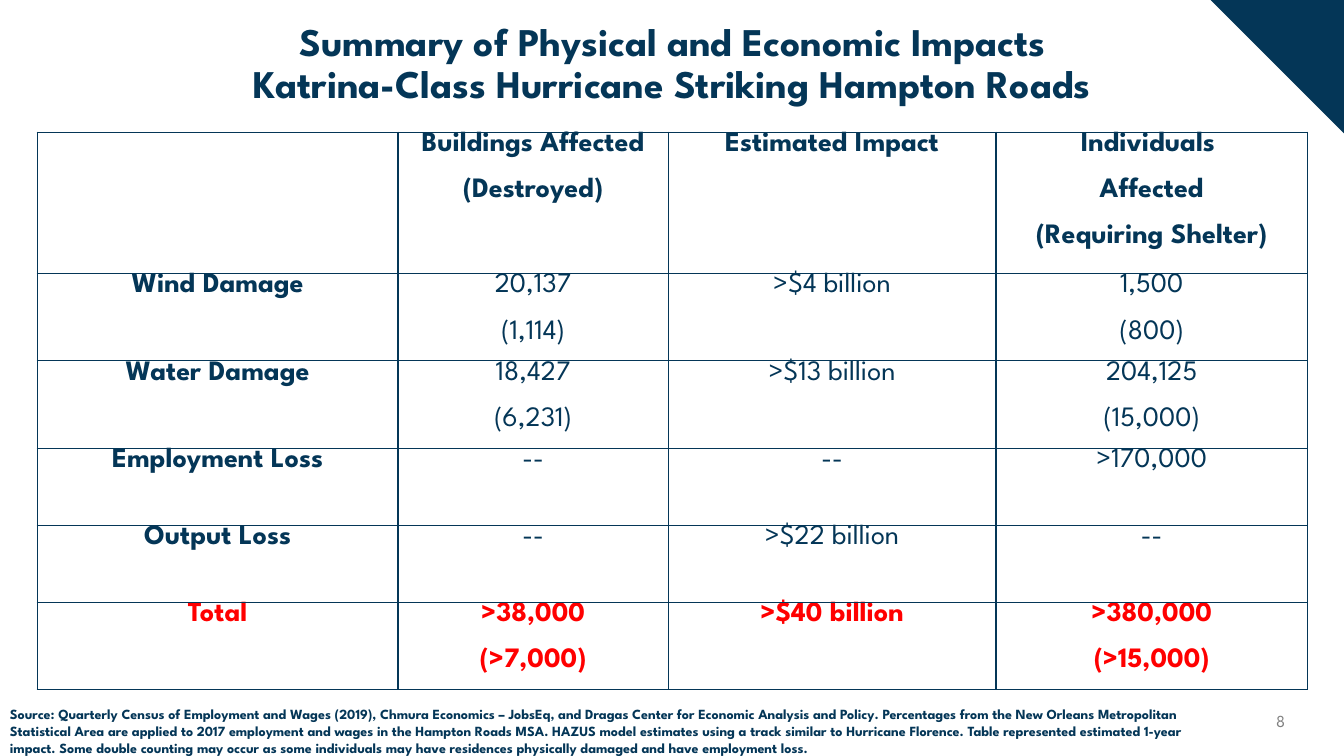
from dataclasses import dataclass
from lxml.etree import SubElement
from pptx import Presentation
from pptx.dml.color import RGBColor
from pptx.enum.shapes import MSO_SHAPE
from pptx.enum.text import MSO_ANCHOR, MSO_AUTO_SIZE, PP_ALIGN
from pptx.oxml.ns import qn
from pptx.slide import Slide
from pptx.table import _Cell
from pptx.text.text import TextFrame
from pptx.util import Cm, Pt


@dataclass(frozen=True)
class Theme:
    font: str = "League Spartan"
    navy: str = "043657"
    red: str = "FF0000"
    gray: str = "808080"
    title: int = 28
    cell: int = 20
    page: int = 12
    note: int = 10


@dataclass(frozen=True)
class Box:
    left: float
    top: float
    width: float
    height: float

    def place(self) -> tuple[Cm, Cm, Cm, Cm]:
        return Cm(self.left), Cm(self.top), Cm(self.width), Cm(self.height)


@dataclass(frozen=True)
class Row:
    height: float
    texts: tuple[str, str, str, str]
    color: str = Theme.navy
    bold: bool = False


THEME = Theme()
COLS = (9.09, 6.81, 8.26, 7.85)
ROWS = (
    Row(3.48, ("", "Buildings Affected\n(Destroyed)", "Estimated Impact",
               "Individuals \nAffected\n(Requiring Shelter)"), bold=True),
    Row(2.16, ("Wind Damage", "20,137\n(1,114)", ">$4 billion", "1,500\n(800)")),
    Row(2.16, ("Water Damage", "18,427\n(6,231)", ">$13 billion", "204,125\n(15,000)")),
    Row(1.94, ("Employment Loss", "--", "--", ">170,000")),
    Row(1.94, ("Output Loss", "--", ">$22 billion", "--")),
    Row(2.16, ("Total", ">38,000\n(>7,000)", ">$40 billion", ">380,000\n(>15,000)"),
        color=THEME.red, bold=True),
)
NOTE = (
    "Source: Quarterly Census of Employment and Wages (2019), Chmura Economics – JobsEq, "
    "and Dragas Center for Economic Analysis and Policy. Percentages from the New Orleans "
    "Metropolitan Statistical Area are applied to 2017 employment and wages in the Hampton "
    "Roads MSA. HAZUS model estimates using a track similar to Hurricane Florence. Table "
    "represented estimated 1-year impact. Some double counting may occur as some individuals "
    "may have residences physically damaged and have employment loss."
)


def write(frame: TextFrame, text: str, *, size: int, color: str = THEME.navy,
          bold: bool = False, align: PP_ALIGN = PP_ALIGN.LEFT,
          after: float = 0, lead: float = 1.0) -> None:
    """Fill a frame: each line is a paragraph, a vertical tab breaks a line."""
    frame.word_wrap = True
    for i, line in enumerate(text.split("\n")):
        para = frame.add_paragraph() if i else frame.paragraphs[0]
        para.text = line
        para.alignment = align
        para.line_spacing = lead
        para.space_before = Pt(0)
        para.space_after = Pt(after)
        for run in para.runs:
            run.font.name = THEME.font
            run.font.size = Pt(size)
            run.font.bold = bold
            run.font.color.rgb = RGBColor.from_string(color)


def add_text(slide: Slide, box: Box, text: str, **style) -> TextFrame:
    frame = slide.shapes.add_textbox(*box.place()).text_frame
    write(frame, text, **style)
    return frame


def rule(cell: _Cell) -> None:
    """Draw a thin line on all four sides of a cell."""
    props = cell._tc.get_or_add_tcPr()
    for i, side in enumerate(("lnL", "lnR", "lnT", "lnB")):
        line = SubElement(props, qn(f"a:{side}"), w=str(Pt(1)))
        fill = SubElement(line, qn("a:solidFill"))
        SubElement(fill, qn("a:srgbClr"), val=THEME.navy)
        props.insert(i, line)


def add_grid(slide: Slide, left: float, top: float) -> None:
    box = Box(left, top, sum(COLS), sum(row.height for row in ROWS))
    grid = slide.shapes.add_table(len(ROWS), len(COLS), *box.place()).table
    grid.first_row = grid.horz_banding = False
    for col, width in zip(grid.columns, COLS):
        col.width = Cm(width)
    for r, row in enumerate(ROWS):
        grid.rows[r].height = Cm(row.height)
        for c, text in enumerate(row.texts):
            cell = grid.cell(r, c)
            cell.margin_left = cell.margin_right = Cm(0.18)
            cell.margin_top = cell.margin_bottom = 0
            cell.fill.background()
            rule(cell)
            write(cell.text_frame, text, size=THEME.cell, color=row.color,
                  bold=row.bold or c == 0, align=PP_ALIGN.CENTER, after=14.4)


def main() -> None:
    deck = Presentation()
    deck.slide_width, deck.slide_height = Cm(33.87), Cm(19.05)
    slide = deck.slides.add_slide(deck.slide_layouts[5])

    # Corner triangle
    box = Box(30.48, -0.03, 3.43, 3.43)
    corner = slide.shapes.add_shape(MSO_SHAPE.RIGHT_TRIANGLE, *box.place())
    corner.rotation = 180
    corner.shadow.inherit = False
    corner.fill.solid()
    corner.fill.fore_color.rgb = RGBColor.from_string(THEME.navy)
    corner.line.fill.background()

    # Title
    title = slide.shapes.title
    box = Box(0.94, 0.38, 32, 2.49)
    title.left, title.top, title.width, title.height = box.place()
    frame = title.text_frame
    frame.auto_size = MSO_AUTO_SIZE.NONE
    frame.vertical_anchor = MSO_ANCHOR.MIDDLE
    write(frame, "Summary of Physical and Economic Impacts\v"
          "Katrina-Class Hurricane Striking Hampton Roads",
          size=THEME.title, bold=True, align=PP_ALIGN.CENTER, lead=0.9)

    # Page number
    page = add_text(slide, Box(25.02, 17.65, 7.62, 1.02), "8", size=THEME.page,
                    color=THEME.gray, align=PP_ALIGN.RIGHT)
    page.vertical_anchor = MSO_ANCHOR.MIDDLE

    # Impact table
    add_grid(slide, 0.94, 3.33)

    # Source note
    note = add_text(slide, Box(0, 17.65, 30.96, 1.55), NOTE, size=THEME.note, bold=True)
    note.auto_size = MSO_AUTO_SIZE.SHAPE_TO_FIT_TEXT

    deck.save("out.pptx")


if __name__ == "__main__":
    main()
